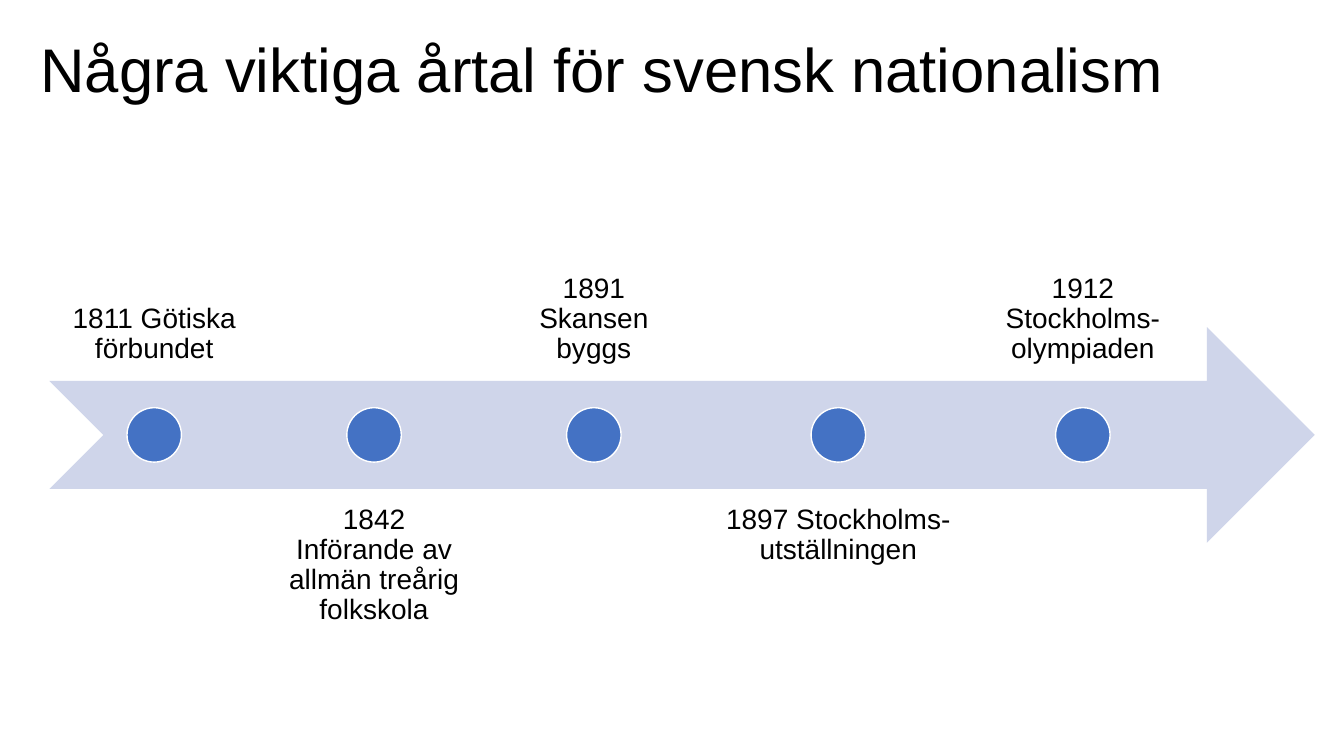
from pptx import Presentation
from pptx.dml.color import RGBColor
from pptx.enum.shapes import MSO_SHAPE
from pptx.enum.text import MSO_ANCHOR, PP_ALIGN
from pptx.util import Inches, Pt

BLACK = RGBColor(0x00, 0x00, 0x00)
WHITE = RGBColor(0xFF, 0xFF, 0xFF)
BLUE = RGBColor(0x44, 0x72, 0xC4)
PALE_BLUE = RGBColor(0xCF, 0xD5, 0xEA)

TITLE = "Några viktiga årtal för svensk nationalism"
EVENTS = [
    ("1811 Götiska förbundet", 2.08),
    ("1842 Införande av allmän treårig folkskola", 2.08),
    ("1891 Skansen byggs", 2.08),
    ("1897 Stockholms-utställningen", 2.57),
    ("1912 Stockholms-olympiaden", 2.08),
]
EVENT_GAP = 0.1
DOT_SIZE = 0.54
LABEL_MARGIN = 0.16

TITLE_FRAME = {"word_wrap": True, "vertical_anchor": MSO_ANCHOR.TOP}
LABEL_FRAME = {
    "word_wrap": True,
    "margin_left": Inches(LABEL_MARGIN),
    "margin_right": Inches(LABEL_MARGIN),
    "margin_top": Inches(LABEL_MARGIN),
    "margin_bottom": Inches(LABEL_MARGIN),
}


def set_attributes(target, values):
    for name, value in values.items():
        setattr(target, name, value)


def write_text(frame, text, size, alignment, frame_format):
    set_attributes(frame, frame_format)
    paragraph = frame.paragraphs[0]
    paragraph.text = text
    set_attributes(paragraph, {
        "alignment": alignment,
        "line_spacing": 0.9,
        "space_before": Pt(0),
    })
    font = paragraph.runs[0].font
    set_attributes(font, {"name": "Arial", "size": Pt(size)})
    font.color.rgb = BLACK


def add_filled_shape(slide, kind, box, fill_color, line_color=None):
    shape = slide.shapes.add_shape(kind, *map(Inches, box))
    shape.shadow.inherit = False
    shape.fill.solid()
    shape.fill.fore_color.rgb = fill_color
    if line_color is None:
        shape.line.fill.background()
    else:
        shape.line.color.rgb = line_color
        shape.line.width = Pt(1)


def place_title(slide, left, top, width, height):
    title = slide.shapes.title
    set_attributes(title, {
        "left": Inches(left),
        "top": Inches(top),
        "width": Inches(width),
        "height": Inches(height),
    })
    write_text(title.text_frame, TITLE, 44, PP_ALIGN.LEFT, TITLE_FRAME)


def add_event(slide, text, left, top, width, height, anchor):
    label = slide.shapes.add_textbox(*map(Inches, (left, top, width, height)))
    frame_format = {**LABEL_FRAME, "vertical_anchor": anchor}
    write_text(label.text_frame, text, 20, PP_ALIGN.CENTER, frame_format)


def add_timeline(slide, left, top, width, height):
    arrow_height = height * 0.4
    arrow_top = top + height * 0.3
    add_filled_shape(slide, MSO_SHAPE.NOTCHED_RIGHT_ARROW,
                     (left, arrow_top, width, arrow_height), PALE_BLUE)
    dot_top = top + (height - DOT_SIZE) / 2
    event_left = left
    for index, (text, event_width) in enumerate(EVENTS):
        if index % 2 == 0:
            label_top, anchor = top, MSO_ANCHOR.BOTTOM
        else:
            label_top, anchor = top + height - arrow_height, MSO_ANCHOR.TOP
        add_event(slide, text, event_left, label_top, event_width, arrow_height, anchor)
        dot_left = event_left + (event_width - DOT_SIZE) / 2
        add_filled_shape(slide, MSO_SHAPE.OVAL,
                         (dot_left, dot_top, DOT_SIZE, DOT_SIZE), BLUE, WHITE)
        event_left += event_width + EVENT_GAP


def main():
    presentation = Presentation()
    presentation.slide_width = Inches(13.33)
    presentation.slide_height = Inches(7.5)
    slide = presentation.slides.add_slide(presentation.slide_layouts[5])
    slide.background.fill.solid()
    slide.background.fill.fore_color.rgb = WHITE
    add_timeline(slide, 0.49, 1.64, 12.55, 5.35)
    place_title(slide, 0.3, 0.34, 11.5, 1.45)
    presentation.save("out.pptx")


if __name__ == "__main__":
    main()
